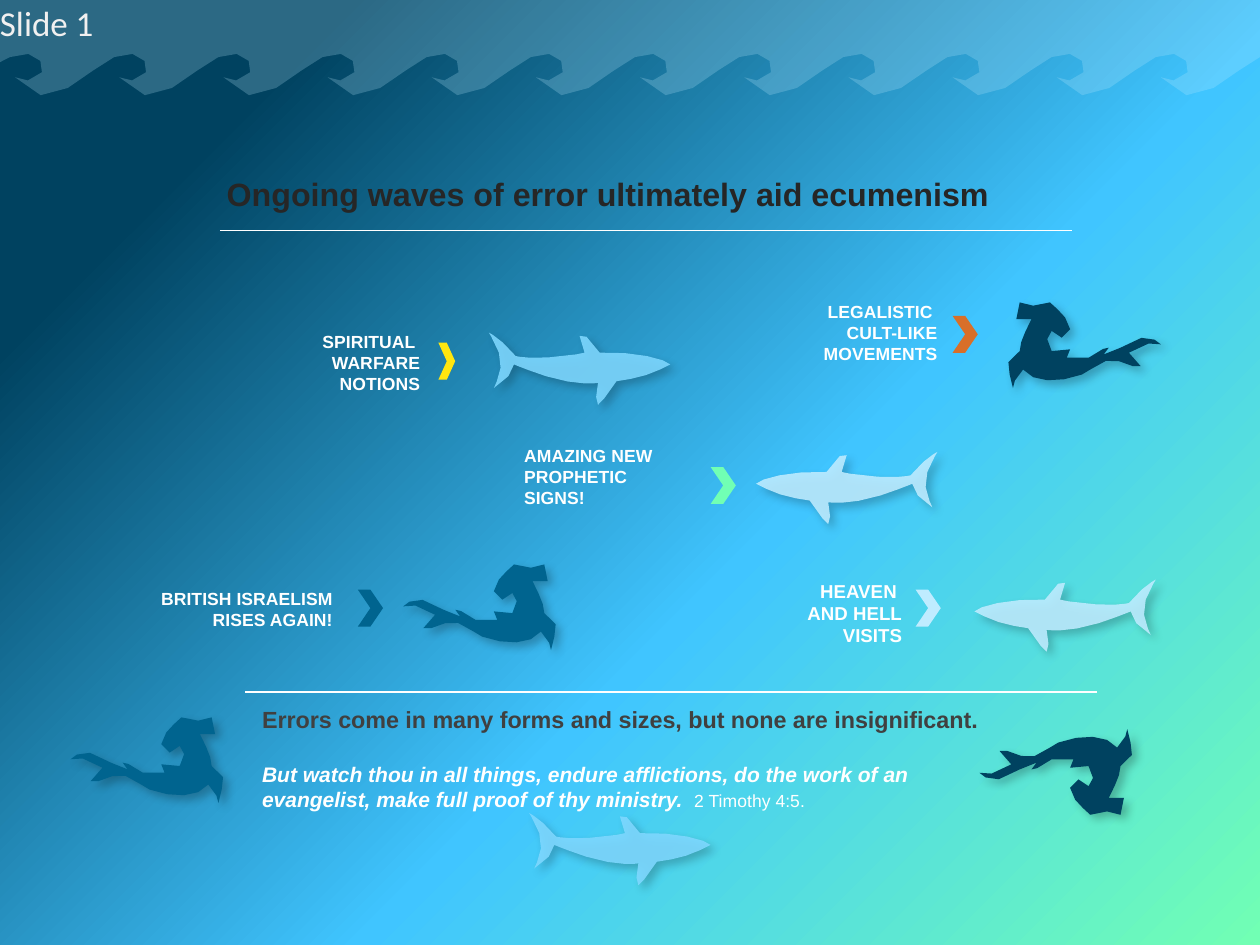
from math import hypot
from pptx import Presentation, util as u
from pptx.dml.color import RGBColor
from pptx.enum import shapes, text
from pptx.oxml import parse_xml
from pptx.oxml.ns import nsdecls

# Outlines in hundredths of an inch: a start point, then Bezier curves
SHARK = (6, 12), [
    (2, 3, 0, 0, 0, 0), (0, 0, 8, 4, 16, 14), (16, 14, 26, 17, 52, 13),
    (54, 13, 55, 12, 57, 12), (56, 6, 54, 2, 54, 2), (54, 2, 61, 0, 66, 12),
    (87, 11, 106, 16, 108, 19), (108, 19, 108, 20, 102, 22),
    (94, 26, 84, 28, 76, 29), (71, 38, 65, 43, 65, 43),
    (65, 43, 62, 35, 65, 30), (65, 30, 53, 32, 34, 26),
    (22, 22, 15, 19, 15, 19), (15, 19, 10, 33, 3, 33), (3, 33, 10, 20, 6, 12)]
HAMMER = (88, 51), [
    (88, 51, 89, 49, 90, 43), (91, 38, 93, 33, 84, 29),
    (84, 24, 81, 18, 77, 10), (84, 9, 84, 11, 86, 10), (89, 8, 86, 2, 84, 0),
    (81, -3, 79, 1, 76, 2), (73, 3, 71, 0, 66, 0), (62, 1, 61, 7, 57, 9),
    (53, 12, 52, 12, 54, 16), (56, 20, 56, 22, 59, 21),
    (61, 20, 63, 16, 65, 17), (67, 18, 70, 25, 65, 29),
    (61, 28, 54, 27, 54, 28), (53, 29, 55, 30, 56, 33),
    (52, 33, 48, 33, 43, 33), (36, 27, 31, 27, 31, 27),
    (31, 27, 33, 28, 34, 31), (30, 30, 27, 28, 24, 27),
    (9, 16, 2, 23, 0, 25), (3, 24, 10, 23, 19, 30),
    (18, 32, 16, 36, 12, 38), (12, 38, 20, 39, 25, 35),
    (30, 32, 35, 36, 42, 40), (41, 41, 44, 43, 47, 43),
    (61, 48, 76, 48, 82, 40), (87, 43, 88, 51, 88, 51)]
CREST = [(12, -6, 22, 2, 19, 9), (18, 18, 3, 12, 3, 12), (22, 40, 48, 5, 62, 0)]

# outline, x and y of its origin, x and y direction, colour, opacity
FISH = [
    (HAMMER, 583, 485, 1, -1, "004260", 100),
    (SHARK, 558, 269, -1, 1, "BFECFF", 88),
    (HAMMER, 42, 427, 1, 1, "00648F", 100),
    (SHARK, 291, 198, 1, 1, "7FD8FF", 88),
    (HAMMER, 691, 180, -1, 1, "004260", 100),
    (SHARK, 688, 345, -1, 1, "BFECFF", 88),
    (HAMMER, 240, 336, 1, 1, "00648F", 100),
    (SHARK, 315, 484, 1, 1, "7FD8FF", 88)]
RULES = [(1.31, 1.37), (1.46, 4.12)]
RULE_W = 5.07

# lines, text box, size, right aligned, chevron box, chevron colour
LABELS = [
    (["SPIRITUAL ", "WARFARE", "NOTIONS"], (1.78, 1.97, 0.72, 0.38), 7.5, True,
     (2.61, 2.04, 0.1, 0.22), "FFE60F"),
    (["AMAZING NEW", "PROPHETIC", "SIGNS!"], (3.12, 2.65, 1.1, 0.38), 7.5, False,
     (4.23, 2.78, 0.15, 0.22), "71FFB4"),
    (["BRITISH ISRAELISM", "RISES AGAIN!"], (0.88, 3.5, 1.1, 0.38), 7.5, True,
     (2.13, 3.51, 0.15, 0.22), "00648F"),
    (["LEGALISTIC ", "CULT-LIKE", "MOVEMENTS"], (4.48, 1.79, 1.1, 0.38), 7.5, True,
     (5.67, 1.88, 0.15, 0.22), "D86F29"),
    (["HEAVEN ", "AND HELL", "VISITS"], (4.16, 3.45, 1.21, 0.52), 8, True,
     (5.45, 3.51, 0.15, 0.22), "BFECFF")]
TITLE = "Ongoing waves of error ultimately aid ecumenism"
NOTE = "Errors come in many forms and sizes, but none are insignificant."
VERSE = ("But watch thou in all things, endure afflictions, do the work of an "
         "evangelist, make full proof of thy ministry.  ")
SEA = [(16, "004260"), (59, "40C5FF"), (100, "71FFB4")]
W, H = 7.5, 5.625


def inch(val):
    return u.Cm(val * 2.54)


def box(*vals):
    return [inch(v) for v in vals]


def rgb(code):
    return RGBColor.from_string(code)


def paint(shape, code, alpha=100):
    shape.shadow.inherit = False
    shape.fill.solid()
    shape.fill.fore_color.rgb = rgb(code)
    shape.line.fill.background()
    if alpha < 100:
        clr = shape.fill._xPr.find(".//{*}srgbClr")
        clr.append(parse_xml(f'<a:alpha {nsdecls("a")} val="{alpha * 1000}"/>'))


def shade(shape):
    """Drop a soft shadow to the lower right."""
    fx = shape._element.spPr.find("{*}effectLst")
    fx.append(parse_xml(
        f'<a:outerShdw {nsdecls("a")} blurRad="50800" dist="38100" dir="2700000" '
        'algn="tl" rotWithShape="0"><a:srgbClr val="000000">'
        '<a:alpha val="23000"/></a:srgbClr></a:outerShdw>'))


def trace(start, curves):
    """Turn Bezier curves into points, more of them on longer curves."""
    pts = [start]
    for a, b, c, d, e, f in curves:
        x, y = pts[-1]
        steps = max(1, min(4, round(hypot(e - x, f - y) / 8)))
        for i in range(1, steps + 1):
            t = i / steps
            s = 1 - t
            k = s**3, 3 * s * s * t, 3 * s * t * t, t**3
            pts.append((k[0] * x + k[1] * a + k[2] * c + k[3] * e,
                        k[0] * y + k[1] * b + k[2] * d + k[3] * f))
    return pts


def draw(pts, x=0, y=0, dx=1, dy=1):
    pts = [box((x + dx * a) / 100, (y + dy * b) / 100) for a, b in pts]
    form = slide.shapes.build_freeform(*pts[0], scale=1)
    form.add_line_segments(pts[1:], close=True)
    return form.convert_to_shape()


def style(run, size, color, font="Arial", bold=False, italic=False):
    run.font.size = u.Pt(size)
    run.font.name = font
    run.font.color.rgb = rgb(color)
    run.font.bold = bold
    run.font.italic = italic


def write(home, place, paras, right=False, gap=0):
    """Add a text box; each paragraph is a list of (text, format) runs."""
    frame = home.add_textbox(*box(*place)).text_frame
    frame.word_wrap = True
    frame.margin_left = frame.margin_right = 0
    frame.margin_top = frame.margin_bottom = 0
    for i, runs in enumerate(paras):
        para = frame.add_paragraph() if i else frame.paragraphs[0]
        para.alignment = text.PP_ALIGN.RIGHT if right else text.PP_ALIGN.LEFT
        para.space_before = u.Pt(gap if i else 0)
        for words, look in runs:
            run = para.add_run()
            run.text = words
            style(run, **look)


prs = Presentation()
prs.slide_width, prs.slide_height = box(W, H)
slide = prs.slides.add_slide(prs.slide_layouts[6])
slide.background.fill.solid()
slide.background.fill.fore_color.rgb = rgb("526582")

sea = slide.shapes.add_shape(shapes.MSO_SHAPE.RECTANGLE, *box(0, 0, W, H))
paint(sea, SEA[0][1])
stops = "".join(f'<a:gs pos="{p * 1000}"><a:srgbClr val="{c}"/></a:gs>' for p, c in SEA)
prop = sea._element.spPr
prop.replace(prop.find("{*}solidFill"), parse_xml(
    f'<a:gradFill {nsdecls("a")} rotWithShape="1"><a:gsLst>{stops}</a:gsLst>'
    '<a:lin ang="2700000" scaled="0"/></a:gradFill>'))

crests = [[v + (34 if i % 2 else 6 + 62 * n) for i, v in enumerate(c)]
          for n in range(12) for c in CREST]
wave = draw(trace((6, 34), crests) + [(750, 0), (0, 0), (0, 37)])
paint(wave, "BFECFF", 23)

for form, x, y, dx, dy, color, alpha in FISH:
    fish = draw(trace(*form), x, y, dx, dy)
    paint(fish, color, alpha)
    shade(fish)

for x, y in RULES:
    rule = slide.shapes.add_connector(shapes.MSO_CONNECTOR.STRAIGHT,
                                      *box(x, y, x + RULE_W, y))
    rule.line.color.rgb = rgb("FFFFFF")
    rule.line.width = u.Pt(0.5)
    rule._element.spPr.append(parse_xml(f'<a:effectLst {nsdecls("a")}/>'))

write(slide.shapes, (0, 0.01, 4.56, 0.25),
      [[("Slide 1", dict(size=15, color="F1F0F0", font="Calibri"))]])
write(slide.shapes, (1.35, 1.04, 5.1, 0.25),
      [[(TITLE, dict(size=13.8, color="262626", bold=True))]])
write(slide.shapes, (1.56, 4.2, 4.51, 0.73), [
    [(NOTE, dict(size=10, color="404040", bold=True))],
    [(VERSE, dict(size=9, color="FFFFFF", bold=True, italic=True)),
     ("2 Timothy 4:5.", dict(size=7.5, color="FFFFFF"))]], gap=12)

for lines, place, size, right, spot, color in LABELS:
    group = slide.shapes.add_group_shape().shapes
    look = dict(size=size, color="FFFFFF", bold=True)
    write(group, place, [[(line, look)] for line in lines], right)
    paint(group.add_shape(shapes.MSO_SHAPE.CHEVRON, *box(*spot)), color)

prs.save("out.pptx")
